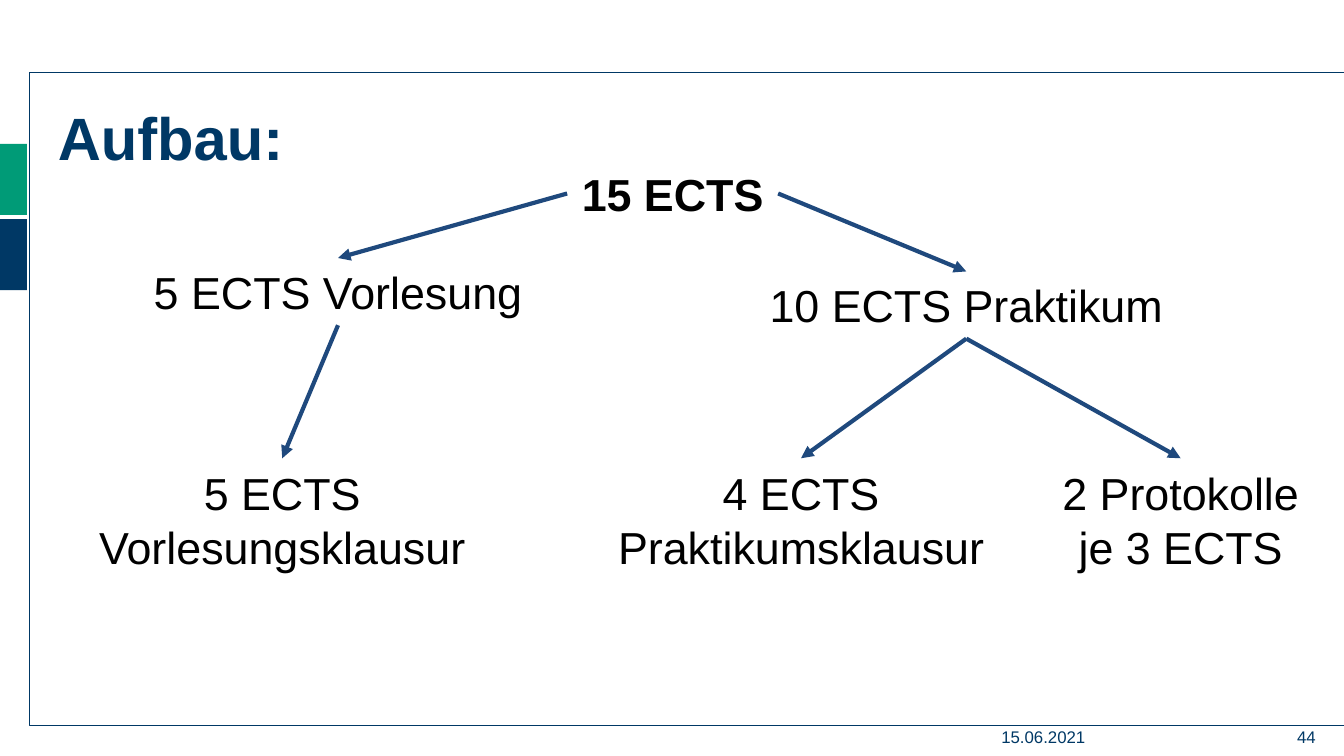
"""Build the slide that shows how the 15 ECTS of the module are divided."""
from lxml import etree
from pptx import Presentation
from pptx import util as u
from pptx.dml.color import RGBColor
from pptx.enum import shapes, text
from pptx.oxml.ns import qn

COLORS = {"navy": "003865", "green": "009B77", "arrow": "1F497D", "black": "000000"}
LEFT, CENTER, RIGHT = text.PP_ALIGN.LEFT, text.PP_ALIGN.CENTER, text.PP_ALIGN.RIGHT
TOP, MIDDLE = text.MSO_ANCHOR.TOP, text.MSO_ANCHOR.MIDDLE


def rgb(name):
    return RGBColor.from_string(COLORS[name])


def write(sp, wording, color, align, frame, font):
    tf = sp.text_frame
    for key, value in frame.items():
        setattr(tf, key, value)
    p = tf.paragraphs[0]
    p.alignment = align
    p.space_before = u.Pt(0)
    r = p.add_run()
    r.text = wording
    for key, value in {"name": "Arial", **font}.items():
        setattr(r.font, key, value)
    r.font.color.rgb = rgb(color)


prs = Presentation()
prs.slide_width = u.Inches(10)
prs.slide_height = prs.slide_width * 9 // 16
s = prs.slides.add_slide(prs.slide_layouts[5])

for y, color in ((1.63, "navy"), (1.07, "green")):
    sp = s.shapes.add_shape(shapes.MSO_SHAPE.RECTANGLE, 0, u.Inches(y), u.Inches(0.2), u.Inches(0.53))
    sp.shadow.inherit = False
    sp.fill.solid()
    sp.fill.fore_color.rgb = rgb(color)
    sp.line.fill.background()

corners = [(u.Inches(x), u.Inches(y)) for x, y in ((10, 0.54), (0.22, 0.54), (0.22, 5.4), (10, 5.4))]
builder = s.shapes.build_freeform(*corners[0])
builder.add_line_segments(corners[1:], close=False)
border = builder.convert_to_shape()
border.shadow.inherit = False
border.fill.background()
border.line.color.rgb = rgb("navy")
border.line.width = u.Pt(0.75)

flush = {"margin_left": 0, "margin_top": 0, "margin_right": 0, "margin_bottom": 0,
         "word_wrap": True, "vertical_anchor": TOP, "auto_size": text.MSO_AUTO_SIZE.NONE}
title = s.shapes.title
title.left, title.top, title.width, title.height = map(u.Inches, (0.43, 0.75, 9.3, 4.52))
write(title, "Aufbau:", "navy", LEFT, flush, {"size": u.Pt(32), "bold": True})

for wording, x, w, align in (("15.06.2021", 7.45, 1.18, LEFT), ("44", 9, 0.79, RIGHT)):
    sp = s.shapes.add_textbox(u.Inches(x), u.Inches(5.41), u.Inches(w), u.Inches(0.16))
    write(sp, wording, "navy", align, flush, {"size": u.Pt(9)})

nodes = {}
for key, wording, box, wrap in (
    ("total", "15 ECTS", (4.22, 1.19, 1.57, 0.5), False),
    ("lecture", "5 ECTS Vorlesung", (1.03, 1.92, 2.97, 0.5), False),
    ("lab", "10 ECTS Praktikum", (5.61, 2.02, 3.16, 0.5), False),
    ("lecture exam", "5 ECTS Vorlesungsklausur", (0.38, 3.41, 3.44, 0.91), True),
    ("lab exam", "4 ECTS Praktikumsklausur", (4.24, 3.41, 3.44, 0.91), True),
    ("reports", "2 Protokolle je 3 ECTS", (7.77, 3.41, 2.03, 0.91), True),
):
    nodes[key] = s.shapes.add_textbox(*map(u.Inches, box))
    frame = {"word_wrap": wrap, "vertical_anchor": MIDDLE,
             "auto_size": text.MSO_AUTO_SIZE.SHAPE_TO_FIT_TEXT}
    write(nodes[key], wording, "black", CENTER, frame, {"size": u.Pt(24), "bold": key == "total"})

SITE_TOP, SITE_LEFT, SITE_BOTTOM, SITE_RIGHT = range(4)
for parent, site, child in (
    ("total", SITE_LEFT, "lecture"),
    ("total", SITE_RIGHT, "lab"),
    ("lecture", SITE_BOTTOM, "lecture exam"),
    ("lab", SITE_BOTTOM, "lab exam"),
    ("lab", SITE_BOTTOM, "reports"),
):
    arrow = s.shapes.add_connector(shapes.MSO_CONNECTOR.STRAIGHT, 0, 0, 0, 0)
    arrow.begin_connect(nodes[parent], site)
    arrow.end_connect(nodes[child], SITE_TOP)
    arrow.line.color.rgb = rgb("arrow")
    arrow.line.width = u.Pt(2.25)
    etree.SubElement(arrow.line._get_or_add_ln(), qn("a:tailEnd"), type="triangle")
    etree.SubElement(arrow._element.spPr, qn("a:effectLst"))

prs.save("out.pptx")
